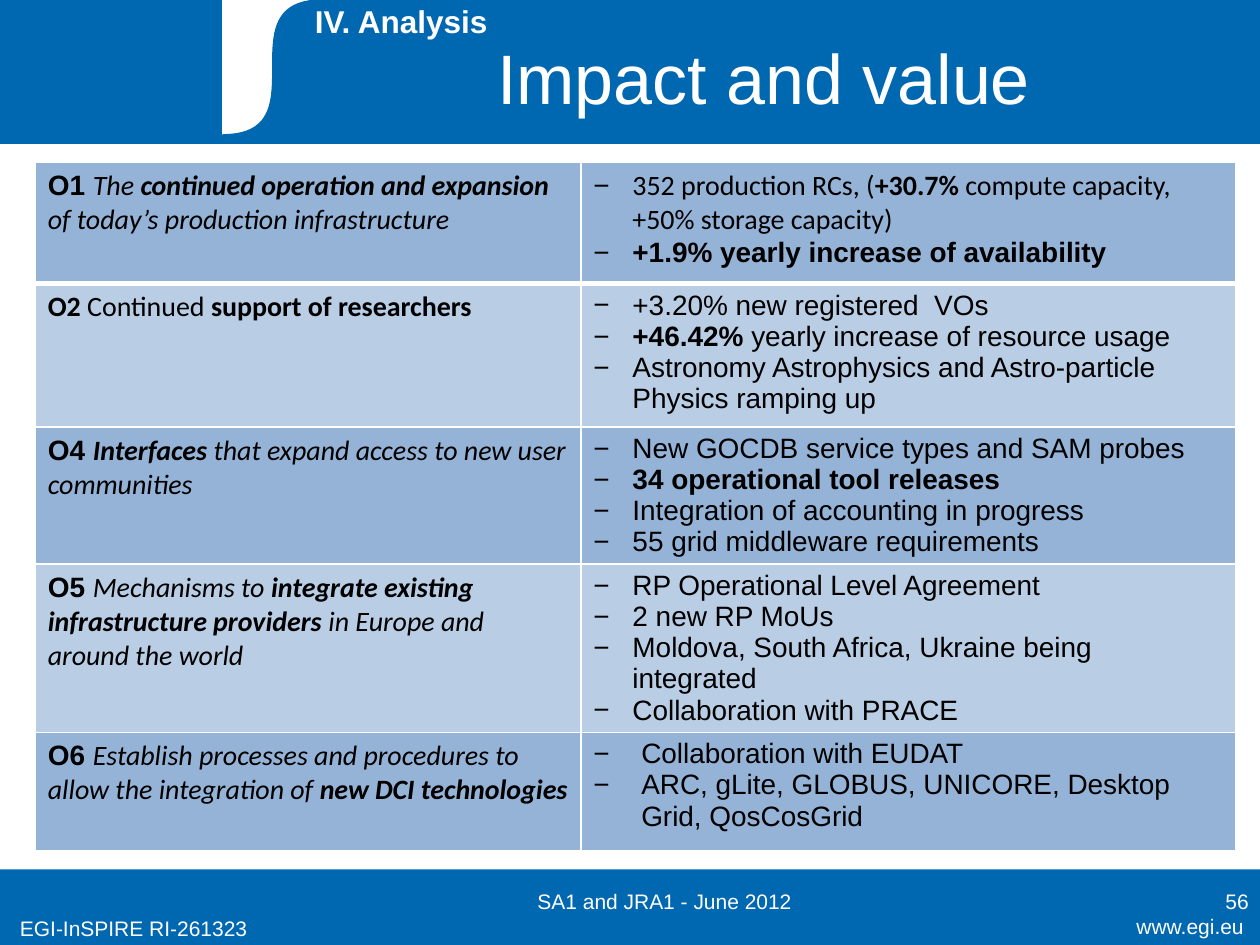
from lxml.etree import SubElement
from pptx import Presentation
from pptx.dml.color import RGBColor
from pptx.enum.shapes import MSO_SHAPE
from pptx.enum.text import MSO_ANCHOR, PP_ALIGN
from pptx.oxml.ns import qn
from pptx.util import Inches, Pt

BLUE, WHITE, BLACK = "0067B1", "FFFFFF", "000000"
ROW_FILLS = ["95B3D7", "B9CDE5"]
FONTS = {"A": "Arial", "C": "Calibri"}

# Each run is (text, style): A Arial, C Calibri, b bold, i italic.
OBJECTIVES = [
    (0.96, 0.31,
     [("O1 ", "Ab"), ("The ", "Ci"), ("continued operation and expansion ", "Cbi"),
      ("of today’s production infrastructure", "Ci")],
     [[("352 production RCs, (", "C"), ("+30.7%", "Cb"),
       (" compute capacity, +50% storage capacity)", "C")],
      [("+1.9% yearly increase of availability", "Ab")]]),
    (1.14, 0.31,
     [("O2", "Cb"), (" Continued ", "C"), ("support of researchers", "Cb")],
     [[("+3.20% new registered  VOs", "A")],
      [("+46.42% ", "Ab"), ("yearly increase of resource usage", "A")],
      [("Astronomy Astrophysics and Astro-particle Physics ramping up", "A")]]),
    (0.88, 0.31,
     [("O4 ", "Ab"), ("Interfaces", "Cbi"),
      (" that expand access to new user communities", "Ci")],
     [[("New GOCDB service types and SAM probes", "A")],
      [("34 operational tool releases", "Ab")],
      [("Integration of accounting in progress", "A")],
      [("55 grid middleware requirements", "A")]]),
    (0.88, 0.31,
     [("O5 ", "Ab"), ("Mechanisms to ", "Ci"),
      ("integrate existing infrastructure providers ", "Cbi"),
      ("in Europe and around the world", "Ci")],
     [[("RP Operational Level Agreement", "A")],
      [("2 new RP MoUs", "A")],
      [("Moldova, South Africa, Ukraine being integrated", "A")],
      [("Collaboration with PRACE", "A")]]),
    (0.94, 0.38,
     [("O6 ", "Ab"),
      ("Establish processes and procedures to allow the integration of ", "Ci"),
      ("new DCI technologies", "Cbi")],
     [[("Collaboration with EUDAT", "A")],
      [("ARC, gLite, GLOBUS, UNICORE, Desktop Grid, QosCosGrid", "A")]]),
]
COLUMN_WIDTHS = [4.33, 5.2]

LEFT, CENTER, RIGHT = PP_ALIGN.LEFT, PP_ALIGN.CENTER, PP_ALIGN.RIGHT
TOP, MIDDLE = MSO_ANCHOR.TOP, MSO_ANCHOR.MIDDLE
LABELS = [
    ("www.egi.eu", (8.39, 7.2, 1.58, 0.31), 12, False, RIGHT, TOP, True),
    ("EGI-InSPIRE RI-261323", (0.06, 7.22, 2.5, 0.31), 12, False, LEFT, TOP, True),
    ("IV. Analysis", (2.4, -0.03, 1.59, 0.4), 18, True, LEFT, TOP, False),
    ("SA1 and JRA1 - June 2012", (3.42, 6.95, 3.71, 0.4), 12, False, CENTER, MIDDLE, True),
    ("56", (7.68, 6.95, 2.33, 0.4), 12, False, RIGHT, MIDDLE, True),
]
TITLE = ("Impact and value", (2.32, 0.13, 7.48, 0.95), 40, False, CENTER, MIDDLE, True)


def color(value):
    return RGBColor.from_string(value)


def box(bounds):
    return [Inches(length) for length in bounds]


def set_attributes(target, values):
    for key, value in values.items():
        setattr(target, key, value)


def paint(shape, fill, outlined=True):
    shape.shadow.inherit = False
    shape.fill.solid()
    shape.fill.fore_color.rgb = color(fill)
    if outlined:
        shape.line.color.rgb = color(fill)
        shape.line.width = Pt(0.75)
    else:
        shape.line.fill.background()


def add_band(slide, bounds, fill, outlined=True):
    band = slide.shapes.add_shape(MSO_SHAPE.RECTANGLE, *box(bounds))
    paint(band, fill, outlined)


def bezier(start, control_1, control_2, end, steps=40):
    for step in range(1, steps + 1):
        t = step / steps
        weights = ((1 - t) ** 3, 3 * t * (1 - t) ** 2, 3 * t ** 2 * (1 - t), t ** 3)
        corners = (start, control_1, control_2, end)
        yield tuple(sum(w * c[axis] for w, c in zip(weights, corners)) for axis in (0, 1))


def add_swoosh(slide):
    left, right, bottom, crest = 1.77, 3.74, 1.07, 2.56
    curve = bezier((left, bottom), (crest, bottom), (left, 0), (crest, 0))
    outline = [(right, bottom), (left, bottom), *curve]
    builder = slide.shapes.build_freeform(Inches(right), 0)
    builder.add_line_segments([(Inches(x), Inches(y)) for x, y in outline], close=True)
    add_band(slide, (left, 0, right - left, bottom), WHITE)
    paint(builder.convert_to_shape(), BLUE)


def format_font(font, size, name, tint, bold, italic=False):
    set_attributes(font, {"size": Pt(size), "name": name, "bold": bold, "italic": italic})
    font.color.rgb = color(tint)


def write_label(shape, label):
    text, bounds, size, bold, align, anchor, wrap = label
    set_attributes(shape, dict(zip(("left", "top", "width", "height"), box(bounds))))
    frame = shape.text_frame
    set_attributes(frame, {"text": text, "vertical_anchor": anchor, "word_wrap": wrap})
    paragraph = frame.paragraphs[0]
    paragraph.alignment = align
    format_font(paragraph.runs[0].font, size, "Arial", WHITE, bold)


def write_runs(paragraph, runs):
    for text, style in runs:
        run = paragraph.add_run()
        run.text = text
        format_font(run.font, 16, FONTS[style[0]], BLACK, "b" in style, "i" in style)


def add_bullet(paragraph, indent):
    properties = paragraph._p.get_or_add_pPr()
    properties.set("marL", str(Inches(indent)))
    properties.set("indent", str(-Inches(indent)))
    SubElement(properties, qn("a:buFont"), typeface="Arial")
    SubElement(properties, qn("a:buChar"), char="−")


def add_borders(cell, widths):
    properties = cell._tc.get_or_add_tcPr()
    for side, width in widths.items():
        border = SubElement(properties, qn(f"a:ln{side}"), w=str(Pt(width)))
        fill = SubElement(border, qn("a:solidFill"))
        SubElement(fill, qn("a:srgbClr"), val=WHITE)


def add_objectives(slide):
    heights = [objective[0] for objective in OBJECTIVES]
    bounds = (0.28, 1.29, sum(COLUMN_WIDTHS), sum(heights))
    table = slide.shapes.add_table(len(heights), len(COLUMN_WIDTHS), *box(bounds)).table
    set_attributes(table, {"first_row": False, "horz_banding": False})
    for column, width in zip(table.columns, COLUMN_WIDTHS):
        column.width = Inches(width)
    for index, (height, indent, goal, results) in enumerate(OBJECTIVES):
        row = table.rows[index]
        row.height = Inches(height)
        goal_cell, result_cell = row.cells
        write_runs(goal_cell.text_frame.paragraphs[0], goal)
        frame = result_cell.text_frame
        for number, runs in enumerate(results):
            paragraph = frame.add_paragraph() if number else frame.paragraphs[0]
            add_bullet(paragraph, indent)
            write_runs(paragraph, runs)
        widths = {"L": 1, "R": 1, "T": 3 if index == 1 else 1, "B": 1 if index else 3}
        for cell in (goal_cell, result_cell):
            add_borders(cell, widths)
            cell.fill.solid()
            cell.fill.fore_color.rgb = color(ROW_FILLS[index % 2])


def main():
    deck = Presentation()
    set_attributes(deck, {"slide_width": Inches(10), "slide_height": Inches(7.5)})
    slide = deck.slides.add_slide(deck.slide_layouts[5])
    add_band(slide, (0, 6.9, 10, 0.6), BLUE, outlined=False)
    add_band(slide, (0, 0, 10, 1.14), BLUE)
    add_swoosh(slide)
    add_objectives(slide)
    title = slide.shapes.title
    slide.shapes._spTree.append(title._element)
    write_label(title, TITLE)
    for label in LABELS:
        write_label(slide.shapes.add_textbox(*box(label[1])), label)
    deck.save("out.pptx")


if __name__ == "__main__":
    main()
